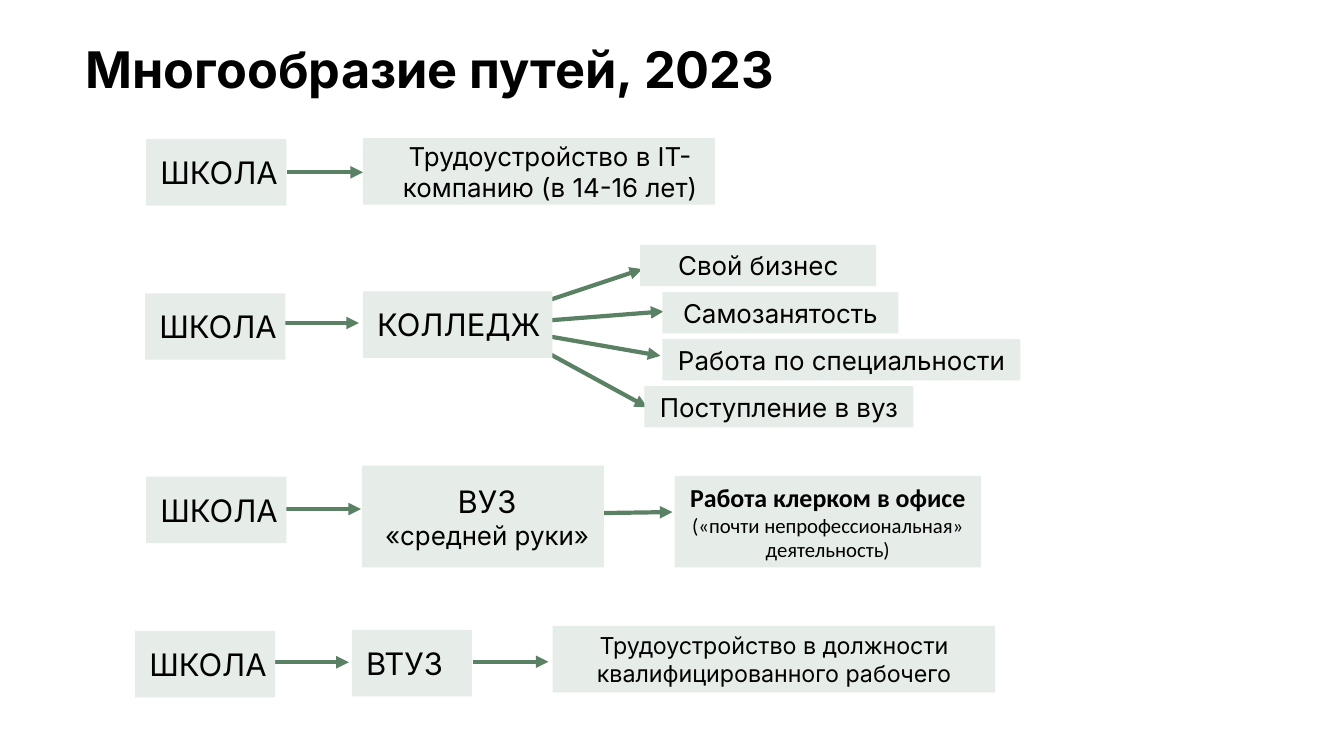
import pptx
import pptx.util
import pptx.dml.color
import pptx.enum.shapes
import pptx.enum.text
import pptx.oxml.ns
from lxml import etree

COLORS = {"text": "000000", "box": "E6EDE8", "arrow": "5B8165"}
COLUMNS, ROWS = 133.3, 75


class PathwaysPage:
    """Draws the pathway diagram on a grid of 133.3 columns by 75 rows."""

    def __init__(self, deck):
        self.column = deck.slide_width / COLUMNS
        self.row = deck.slide_height / ROWS
        self.page = deck.slides.add_slide(deck.slide_layouts[6])

    def color(self, name):
        return pptx.dml.color.RGBColor.from_string(COLORS[name])

    def place(self, *numbers):
        units = (self.column, self.row) * 2
        return [round(number * unit) for number, unit in zip(numbers, units)]

    def label(self, shape, text, sizes, left, right, centered, font, bold):
        frame = shape.text_frame
        frame.text = text
        frame.word_wrap = True
        frame.vertical_anchor = pptx.enum.text.MSO_ANCHOR.MIDDLE
        frame.margin_left = round(left * self.column)
        frame.margin_right = round(right * self.column)
        frame.margin_top = frame.margin_bottom = 0
        align = pptx.enum.text.PP_ALIGN
        spans = []
        for para in frame.paragraphs:
            para.alignment = align.CENTER if centered else align.LEFT
            spans.extend(para.runs)
        for index, (span, size) in enumerate(zip(spans, sizes)):
            span.font.size = pptx.util.Pt(size)
            span.font.name = font
            span.font.bold = bold and index == 0
            span.font.color.rgb = self.color("text")
        return frame

    def title(self, text, *area):
        shape = self.page.shapes.add_textbox(*self.place(*area))
        frame = self.label(shape, text, [36], 0, 0, False, "Inter", True)
        frame.paragraphs[0].line_spacing = 0.9

    def box(self, text, area, sizes=(18.5,), left=1, right=1,
            centered=True, font="Inter", bold=False):
        kind = pptx.enum.shapes.MSO_SHAPE.RECTANGLE
        shape = self.page.shapes.add_shape(kind, *self.place(*area))
        shape.shadow.inherit = False
        shape.fill.solid()
        shape.fill.fore_color.rgb = self.color("box")
        shape.line.fill.background()
        self.label(shape, text, sizes, left, right, centered, font, bold)

    def stage(self, text, left, top, width):
        self.box(text, (left, top, width, 6.6), [22.1], 1.4, 0, False)

    def arrow(self, *ends):
        kind = pptx.enum.shapes.MSO_CONNECTOR.STRAIGHT
        connector = self.page.shapes.add_connector(kind, *self.place(*ends))
        connector.line.width = pptx.util.Pt(3)
        connector.line.color.rgb = self.color("arrow")
        qualify = pptx.oxml.ns.qn
        properties = connector.element.spPr
        outline = properties.find(qualify("a:ln"))
        etree.SubElement(outline, qualify("a:tailEnd"), type="triangle")
        etree.SubElement(properties, qualify("a:effectLst"))


def main():
    deck = pptx.Presentation()
    deck.slide_width = pptx.util.Inches(13.33)
    deck.slide_height = pptx.util.Inches(7.5)
    page = PathwaysPage(deck)
    page.title("Многообразие путей, 2023", 8.5, 4.4, 116.5, 5.5)

    school_arrows = [(28.5, 17.1), (28.1, 32.05), (28.3, 50.5), (27.1, 65.7)]
    for left, top in school_arrows + [(46.9, 65.65)]:
        page.arrow(left, top, left + 7.5, top)
    page.arrow(52.9, 51, 66.7, 50.8)
    college_arrows = [
        (52.9, 30.3, 63.7, 26.7),
        (53, 31.9, 65.8, 30.9),
        (52.9, 33.1, 65.5, 35.3),
        (53.4, 34.5, 64.2, 40.4),
    ]
    for ends in college_arrows:
        page.arrow(*ends)

    for left, top in [(14.5, 13.8), (14.4, 29.1), (14.5, 47.3), (13.4, 62.6)]:
        page.stage("ШКОЛА", left, top, 13.9)
    page.stage("КОЛЛЕДЖ", 36, 28.9, 18.8)
    page.stage("ВТУЗ", 34.9, 62.5, 11.9)

    college_outcomes = [
        ("Свой бизнес", 63.5, 23.4),
        ("Самозанятость", 65.7, 23.4),
        ("Работа по специальности", 65.7, 35.5),
        ("Поступление в вуз", 63.9, 26.7),
    ]
    for index, (text, left, width) in enumerate(college_outcomes):
        page.box(text, (left, 24.3 + 4.67 * index, width, 4.1))

    page.box("Трудоустройство в IT-компанию (в 14-16 лет)",
             (36, 13.7, 34.9, 6.6), left=2.2, right=0)
    page.box("ВУЗ\v«средней руки»", (35.9, 46.2, 24, 10.1),
             [22.1, 18.5], left=1.4, right=0.6)
    page.box("Работа клерком в офисе\n(«почти непрофессиональная» деятельность)",
             (66.9, 47.2, 30.4, 9.1), [18.5, 14.8], font="Calibri", bold=True)
    page.box("Трудоустройство в должности квалифицированного рабочего",
             (54.8, 62.1, 43.9, 6.6), [16.6])
    deck.save("out.pptx")


if __name__ == "__main__":
    main()
